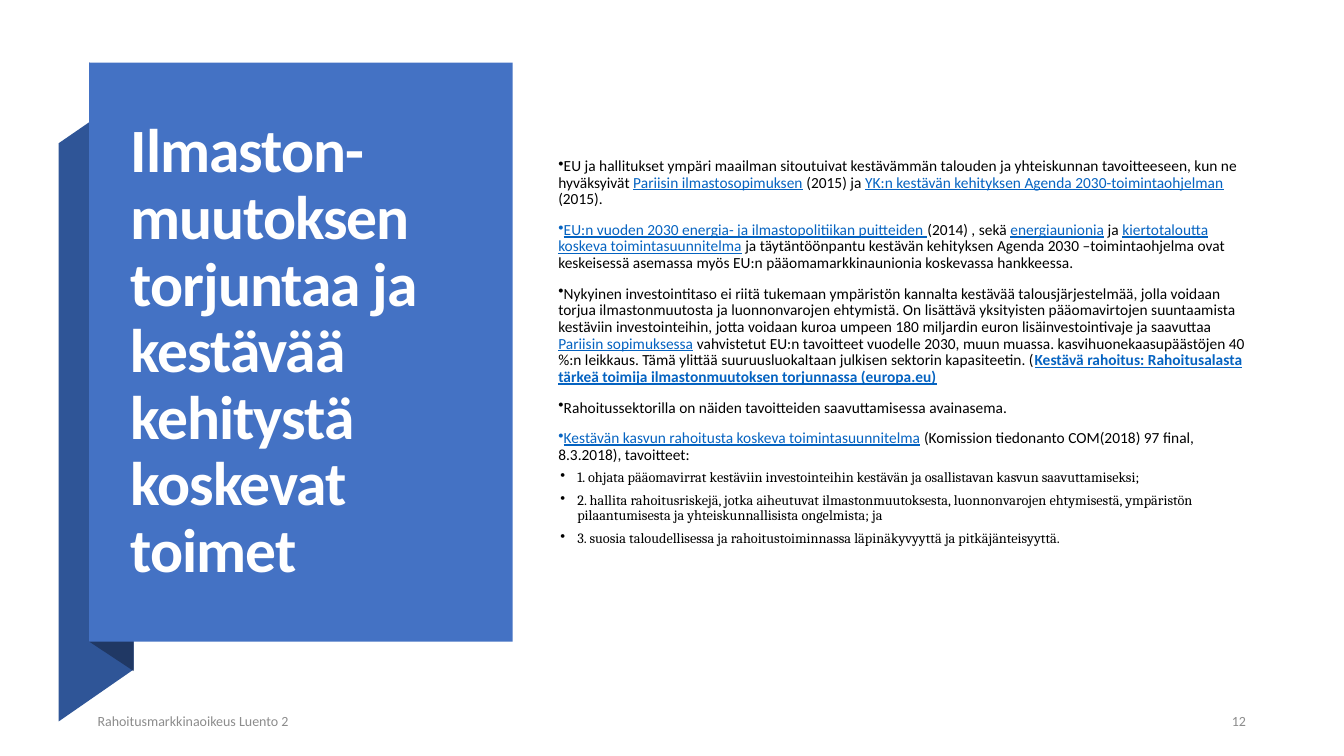
import pptx
import pptx.util
import pptx.dml.color
import pptx.enum.shapes
import pptx.enum.text
import pptx.oxml.ns
import lxml.etree

Cm = pptx.util.Cm
Pt = pptx.util.Pt
RGBColor = pptx.dml.color.RGBColor
PP_ALIGN = pptx.enum.text.PP_ALIGN

PANEL_BLUE = RGBColor(0x44, 0x72, 0xC4)
RIBBON_BLUE = RGBColor(0x2F, 0x55, 0x97)
FOLD_NAVY = RGBColor(0x20, 0x38, 0x64)
LINK_BLUE = RGBColor(0x05, 0x63, 0xC1)
FOOTER_GREY = RGBColor(0x8C, 0x8C, 0x8C)
WHITE = RGBColor(0xFF, 0xFF, 0xFF)
BLACK = RGBColor(0x00, 0x00, 0x00)

# Parts between bars are underlined links
MAIN_POINTS = [
    "EU ja hallitukset ympäri maailman sitoutuivat kestävämmän talouden ja yhteiskunnan "
    "tavoitteeseen, kun ne hyväksyivät |Pariisin ilmastosopimuksen| (2015) ja "
    "|YK:n kestävän kehityksen Agenda 2030-toimintaohjelman| (2015).",
    "|EU:n vuoden 2030 energia- ja ilmastopolitiikan puitteiden |(2014) , sekä "
    "|energiaunionia| ja |kiertotaloutta koskeva toimintasuunnitelma| ja täytäntöönpantu "
    "kestävän kehityksen Agenda 2030 –toimintaohjelma ovat keskeisessä asemassa myös "
    "EU:n pääomamarkkinaunionia koskevassa hankkeessa.",
    "Nykyinen investointitaso ei riitä tukemaan ympäristön kannalta kestävää "
    "talousjärjestelmää, jolla voidaan torjua ilmastonmuutosta ja luonnonvarojen ehtymistä. "
    "On lisättävä yksityisten pääomavirtojen suuntaamista kestäviin investointeihin, jotta "
    "voidaan kuroa umpeen 180 miljardin euron lisäinvestointivaje ja saavuttaa "
    "|Pariisin sopimuksessa| vahvistetut EU:n tavoitteet vuodelle 2030, muun muassa. "
    "kasvihuonekaasupäästöjen 40 %:n leikkaus. Tämä ylittää suuruusluokaltaan julkisen "
    "sektorin kapasiteetin. (|Kestävä rahoitus: Rahoitusalasta tärkeä toimija "
    "ilmastonmuutoksen torjunnassa (europa.eu)",
    "Rahoitussektorilla on näiden tavoitteiden saavuttamisessa avainasema.",
    "|Kestävän kasvun rahoitusta koskeva toimintasuunnitelma| (Komission tiedonanto "
    "COM(2018) 97 final, 8.3.2018), tavoitteet:",
]
GOALS = [
    "1. ohjata pääomavirrat kestäviin investointeihin kestävän ja osallistavan kasvun "
    "saavuttamiseksi;",
    "2. hallita rahoitusriskejä, jotka aiheutuvat ilmastonmuutoksesta, luonnonvarojen "
    "ehtymisestä, ympäristön pilaantumisesta ja yhteiskunnallisista ongelmista; ja",
    "3. suosia taloudellisessa ja rahoitustoiminnassa läpinäkyvyyttä ja pitkäjänteisyyttä.",
]


def add_text_frame(left, top, width, height):
    """Add a wrapping, vertically centred text box and return its frame."""
    tf = s.shapes.add_textbox(Cm(left), Cm(top), Cm(width), Cm(height)).text_frame
    tf.word_wrap = True
    tf.vertical_anchor = pptx.enum.text.MSO_ANCHOR.MIDDLE
    return tf


def paint(sp, color):
    """Give a shape a flat fill without outline or shadow."""
    sp.fill.solid()
    sp.fill.fore_color.rgb = color
    sp.line.fill.background()
    sp.shadow.inherit = False


prs = pptx.Presentation()
prs.slide_width = Cm(33.87)
prs.slide_height = Cm(19.05)
s = prs.slides.add_slide(prs.slide_layouts[6])

# Folded ribbon behind the title panel
ribbon_parts = [
    (RIBBON_BLUE, [(1.48, 18.18), (3.37, 16.87), (3.37, 2.31), (1.48, 3.61)]),
    (FOLD_NAVY, [(2.25, 16.17), (3.37, 16.91), (3.37, 2.29), (2.25, 1.58)]),
]
for color, corners in ribbon_parts:
    points = [(Cm(x), Cm(y)) for x, y in corners]
    outline = s.shapes.build_freeform(*points[0])
    outline.add_line_segments(points[1:], close=True)
    paint(outline.convert_to_shape(), color)

panel = s.shapes.add_shape(
    pptx.enum.shapes.MSO_SHAPE.RECTANGLE, Cm(2.25), Cm(1.58), Cm(10.67), Cm(14.59))
paint(panel, PANEL_BLUE)

# Title
tf = add_text_frame(3.05, 2.46, 8.97, 12.85)
tf.text = "Ilmaston-muutoksen torjuntaa ja kestävää kehitystä koskevat toimet"
p = tf.paragraphs[0]
p.line_spacing = 0.9
r = p.runs[0]
r.font.name = "Calibri"
r.font.size = Pt(44)
r.font.bold = True
r.font.color.rgb = WHITE
r.font._element.set("spc", "-80")

# Body: main points, then the numbered goals one level down
tf = add_text_frame(13.82, 2.46, 18.14, 12.83)
levels = [
    (MAIN_POINTS, 0, 0, -0.64, 10, "Calibri", 11),
    (GOALS, 1, 0.48, -0.43, 5, "Cambria", 10.2),
]
for texts, level, margin, indent, space, font, size in levels:
    for text in texts:
        first = text is MAIN_POINTS[0]
        p = tf.paragraphs[0] if first else tf.add_paragraph()
        pPr = p._p.get_or_add_pPr()
        pPr.set("marL", str(Cm(margin)))
        pPr.set("indent", str(Cm(indent)))
        bullet = lxml.etree.SubElement(pPr, pptx.oxml.ns.qn("a:buChar"))
        bullet.set("char", "•")
        p.level = level
        p.line_spacing = 0.9
        p.space_before = Pt(0 if first else space)
        for i, part in enumerate(text.split("|")):
            if not part:
                continue
            is_link = i % 2 == 1
            r = p.add_run()
            r.text = part
            r.font.name = font
            r.font.size = Pt(size)
            r.font.underline = is_link
            r.font.bold = part.startswith("Kestävä rahoitus")
            r.font.color.rgb = LINK_BLUE if is_link else BLACK

# Footer and slide number
footers = [
    ("Rahoitusmarkkinaoikeus Luento 2", 2.21, 18.77, PP_ALIGN.LEFT),
    ("12", 29.74, 1.91, PP_ALIGN.RIGHT),
]
for text, left, width, align in footers:
    tf = add_text_frame(left, 17.73, width, 0.89)
    tf.text = text
    p = tf.paragraphs[0]
    p.alignment = align
    p.space_after = Pt(6)
    r = p.runs[0]
    r.font.name = "Calibri"
    r.font.size = Pt(10)
    r.font.color.rgb = FOOTER_GREY

prs.save("out.pptx")
